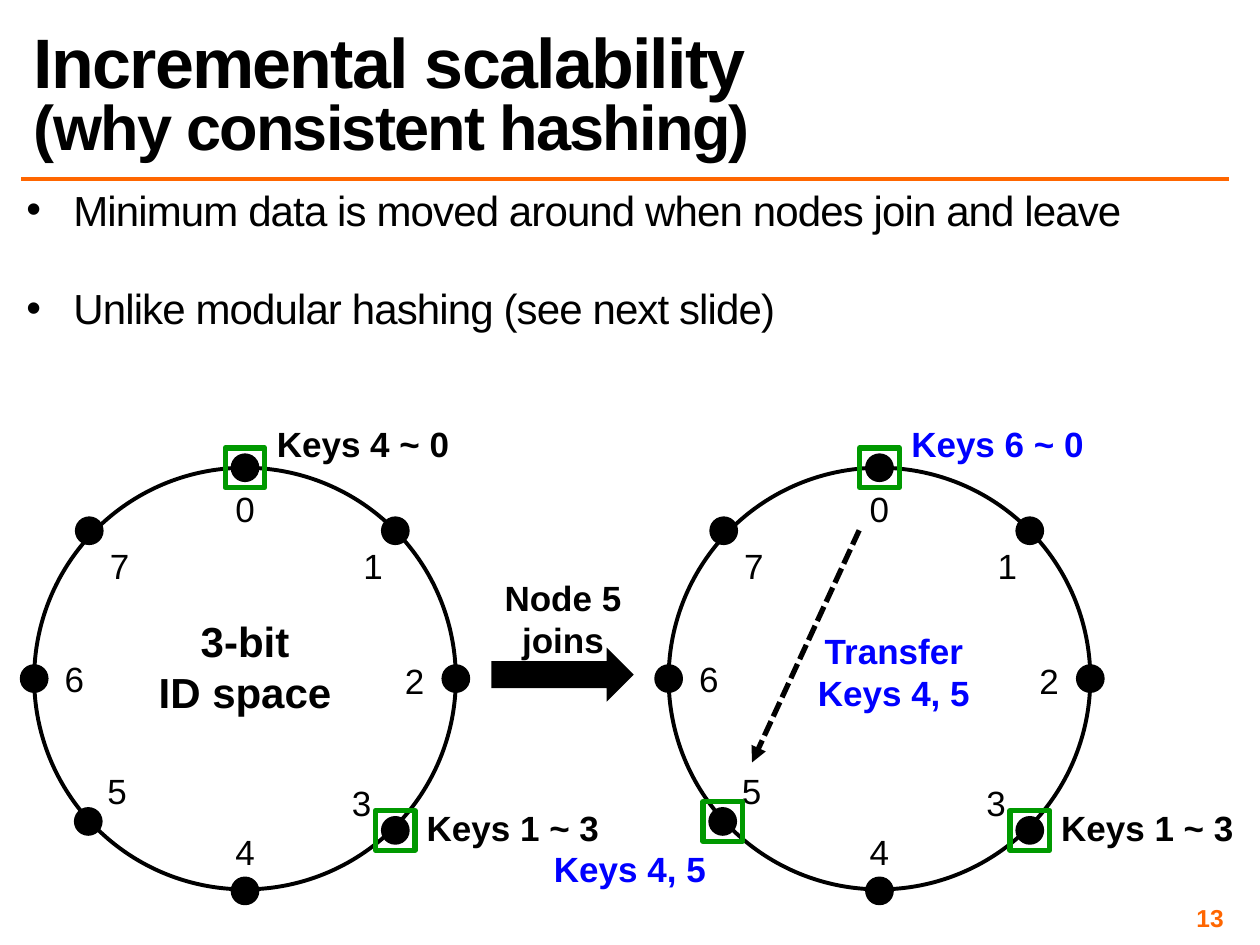
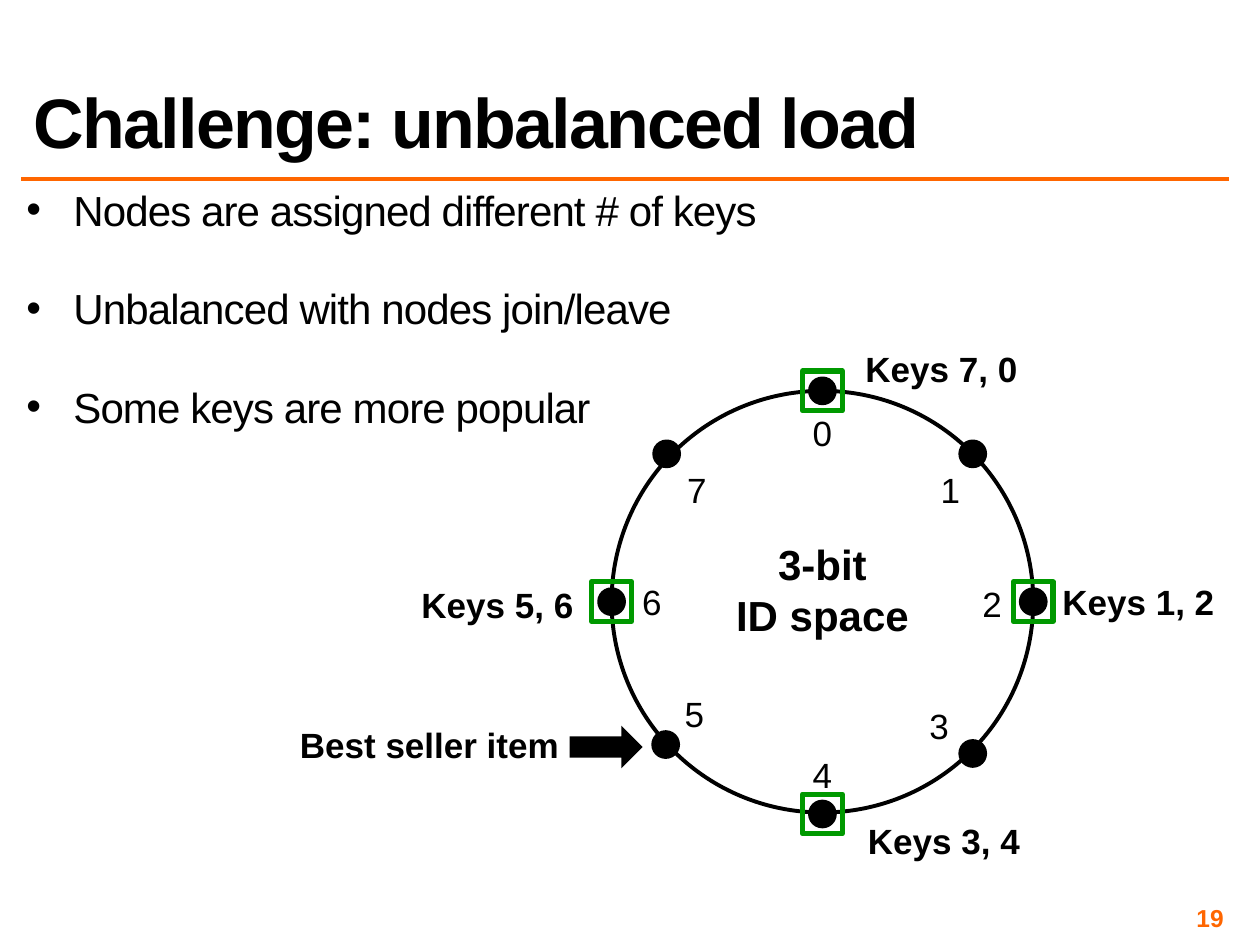
from dataclasses import dataclass

from lxml import etree
from pptx import Presentation
from pptx import util as u
from pptx.dml.color import RGBColor
from pptx.enum import dml, shapes as kinds, text
from pptx.oxml.ns import qn


@dataclass(frozen=True)
class Theme:
    font: str = "Arial"
    ink: RGBColor = RGBColor(0x00, 0x00, 0x00)
    accent: RGBColor = RGBColor(0xFF, 0x66, 0x00)
    member: RGBColor = RGBColor(0x00, 0x99, 0x00)
    changed: RGBColor = RGBColor(0x00, 0x00, 0xFF)
    title: int = 40
    subtitle: int = 36
    body: int = 24
    label: int = 20
    page: int = 14


THEME = Theme()

# Centimetres from the centre of the ring, in the order of the node numbers
RADIUS = 4.25
DOTS = [(0, -4.25), (3.03, -2.98), (4.25, 0), (3.03, 3.06),
        (0, 4.28), (-3.16, 2.88), (-4.25, 0), (-3.14, -2.98)]
NUMBERS = [(0, -3.42), (2.58, -2.27), (3.42, 0.04), (2.35, 2.5),
           (0, 3.49), (-2.58, 2.25), (-3.44, 0), (-2.53, -2.27)]


def add_run(paragraph, words, size, color=THEME.ink, bold=False, spacing=0):
    """Add a run; spacing is the tracking in points."""
    run = paragraph.add_run()
    run.text = words
    run.font.name = THEME.font
    run.font.size = u.Pt(size)
    run.font.bold = bold
    run.font.color.rgb = color
    if spacing:
        run._r.get_or_add_rPr().set("spc", str(int(spacing * 100)))


def centered_box(center, width, height):
    """Give left, top, width and height of a box around a centre in cm."""
    x, y = center
    return [u.Cm(value) for value in (x - width / 2, y - height / 2, width, height)]


def add_preset(shapes, kind, center, width, height, fill=None, line=None, weight=2.25):
    shape = shapes.add_shape(kind, *centered_box(center, width, height))
    shape.shadow.inherit = False
    if fill is None:
        shape.fill.background()
    else:
        shape.fill.solid()
        shape.fill.fore_color.rgb = fill
    if line is None:
        shape.line.fill.background()
    else:
        shape.line.color.rgb = line
        shape.line.width = u.Pt(weight)


def add_line(shapes, start, end, color, weight):
    points = [u.Cm(value) for value in (*start, *end)]
    line = shapes.add_connector(kinds.MSO_CONNECTOR.STRAIGHT, *points)
    line.line.color.rgb = color
    line.line.width = u.Pt(weight)
    etree.SubElement(line._element.spPr, qn("a:effectLst"))
    return line


def add_dashed_arrow(shapes, start, end):
    arrow = add_line(shapes, start, end, THEME.ink, 3)
    arrow.line.dash_style = dml.MSO_LINE.SQUARE_DOT
    etree.SubElement(arrow.line._get_or_add_ln(), qn("a:tailEnd"), type="triangle")


def add_block_arrow(shapes, center, width, height):
    add_preset(shapes, kinds.MSO_SHAPE.RIGHT_ARROW, center, width, height, fill=THEME.ink)


def add_label(shapes, center, lines, width=4, size=THEME.label, color=THEME.ink, bold=True):
    height = 0.26 + len(lines) * size * 0.043
    box = shapes.add_textbox(*centered_box(center, width, height))
    frame = box.text_frame
    frame.word_wrap = False
    frame.vertical_anchor = text.MSO_ANCHOR.MIDDLE
    for index, words in enumerate(lines):
        paragraph = frame.add_paragraph() if index else frame.paragraphs[0]
        paragraph.alignment = text.PP_ALIGN.CENTER
        add_run(paragraph, words, size, color, bold)


class Ring:
    """A grouped ring of eight nodes, with places measured from its centre."""

    def __init__(self, slide, center, members):
        self.center = center
        self.shapes = slide.shapes.add_group_shape().shapes
        oval = kinds.MSO_SHAPE.OVAL
        add_preset(self.shapes, oval, center, 2 * RADIUS, 2 * RADIUS, line=THEME.ink)
        for node, (dot, number) in enumerate(zip(DOTS, NUMBERS)):
            add_preset(self.shapes, oval, self.at(dot), 0.5, 0.5, THEME.ink, THEME.ink)
            add_label(self.shapes, self.at(number), [str(node)], 0.9, bold=False)
        for node in members:
            add_preset(self.shapes, kinds.MSO_SHAPE.RECTANGLE, self.at(DOTS[node]),
                       0.8, 0.8, line=THEME.member, weight=3)

    def at(self, offset):
        return self.center[0] + offset[0], self.center[1] + offset[1]

    def add_note(self, offset, *lines, **style):
        add_label(self.shapes, self.at(offset), lines, **style)

    def add_id_space(self):
        self.add_note((0, -0.25), "3-bit", "ID space", size=THEME.body)

    def add_transfer(self, start, end):
        add_dashed_arrow(self.shapes, self.at(start), self.at(end))


def place(shape, left, top, width, height):
    shape.left, shape.top = u.Cm(left), u.Cm(top)
    shape.width, shape.height = u.Cm(width), u.Cm(height)


def set_title(slide, title, subtitle):
    shape = slide.shapes.title
    place(shape, 0.43, 0.43, 24.33, 2.97)
    frame = shape.text_frame
    frame.auto_size = text.MSO_AUTO_SIZE.NONE
    frame.vertical_anchor = text.MSO_ANCHOR.BOTTOM
    paragraph = frame.paragraphs[0]
    paragraph.alignment = text.PP_ALIGN.LEFT
    paragraph.line_spacing = 0.8
    add_run(paragraph, title, THEME.title, bold=True, spacing=-1)
    if subtitle:
        paragraph.add_line_break()
        add_run(paragraph, subtitle, THEME.subtitle, bold=True, spacing=-1)


def set_margins(frame, margin):
    frame.margin_left = frame.margin_right = u.Cm(margin)
    frame.margin_top = frame.margin_bottom = u.Cm(margin)


def set_bullets(slide, items):
    shape = slide.placeholders[1]
    place(shape, 0.43, 3.81, 24.33, 14)
    frame = shape.text_frame
    frame.auto_size = text.MSO_AUTO_SIZE.NONE
    set_margins(frame, 0.1)
    for index, words in enumerate(items):
        paragraph = frame.add_paragraph() if index else frame.paragraphs[0]
        paragraph.line_spacing = 0.8
        paragraph.space_before = u.Pt(33.3 if index else 5.6)
        properties = paragraph._p.get_or_add_pPr()
        properties.set("marL", str(u.Cm(0.95)))
        properties.set("indent", str(u.Cm(-0.95)))
        etree.SubElement(properties, qn("a:buChar"), char="•")
        add_run(paragraph, words, THEME.body, spacing=-0.5)


def add_page_number(slide, number):
    box = slide.shapes.add_textbox(u.Cm(18.85), u.Cm(18.21), u.Cm(5.92), u.Cm(0.58))
    frame = box.text_frame
    frame.word_wrap = True
    frame.vertical_anchor = text.MSO_ANCHOR.MIDDLE
    set_margins(frame, 0.1)
    frame.paragraphs[0].alignment = text.PP_ALIGN.RIGHT
    add_run(frame.paragraphs[0], str(number), THEME.page, THEME.accent, bold=True)


def add_content_slide(presentation, number, title, bullets, subtitle=None):
    slide = presentation.slides.add_slide(presentation.slide_layouts[1])
    add_line(slide.shapes, (0.43, 3.61), (24.77, 3.61), THEME.accent, 2)
    set_title(slide, title, subtitle)
    set_bullets(slide, bullets)
    add_page_number(slide, number)
    return slide


def build_scalability(presentation):
    slide = add_content_slide(
        presentation, 13, "Incremental scalability",
        ["Minimum data is moved around when nodes join and leave",
         "Unlike modular hashing (see next slide)"],
        subtitle="(why consistent hashing)")

    before = Ring(slide, (4.94, 13.68), members=[0, 3])
    before.add_id_space()
    before.add_note((2.38, -4.74), "Keys 4 ~ 0")
    before.add_note((5.4, 3.01), "Keys 1 ~ 3")

    add_block_arrow(slide.shapes, (11.34, 13.6), 2.87, 1.09)
    add_label(slide.shapes, (11.35, 12.47), ["Node 5 joins"], 4.7)

    after = Ring(slide, (17.73, 13.68), members=[0, 3, 5])
    after.add_note((2.38, -4.74), "Keys 6 ~ 0", color=THEME.changed)
    after.add_note((5.4, 3.01), "Keys 1 ~ 3")
    after.add_note((-5.03, 3.82), "Keys 4, 5", color=THEME.changed)
    after.add_transfer((-0.41, -2.99), (-2.57, 1.69))
    after.add_note((0.29, -0.15), "Transfer", "Keys 4, 5", color=THEME.changed)


def build_unbalanced_load(presentation):
    slide = add_content_slide(
        presentation, 19, "Challenge: unbalanced load",
        ["Nodes are assigned different # of keys",
         "Unbalanced with nodes join/leave",
         "Some keys are more popular"])

    ring = Ring(slide, (16.58, 12.13), members=[0, 2, 4, 6])
    ring.add_id_space()
    ring.add_note((2.4, -4.71), "Keys 7, 0")
    ring.add_note((6.37, 0), "Keys 1, 2")
    ring.add_note((2.45, 4.81), "Keys 3, 4")
    ring.add_note((-6.55, 0.06), "Keys 5, 6")

    add_block_arrow(slide.shapes, (12.22, 15.06), 1.47, 0.86)
    add_label(slide.shapes, (8.66, 15.01), ["Best seller item"], 5.8)


def main():
    presentation = Presentation()
    presentation.slide_width, presentation.slide_height = u.Cm(25.4), u.Cm(19.05)
    build_scalability(presentation)
    build_unbalanced_load(presentation)
    presentation.save("out.pptx")


if __name__ == "__main__":
    main()
